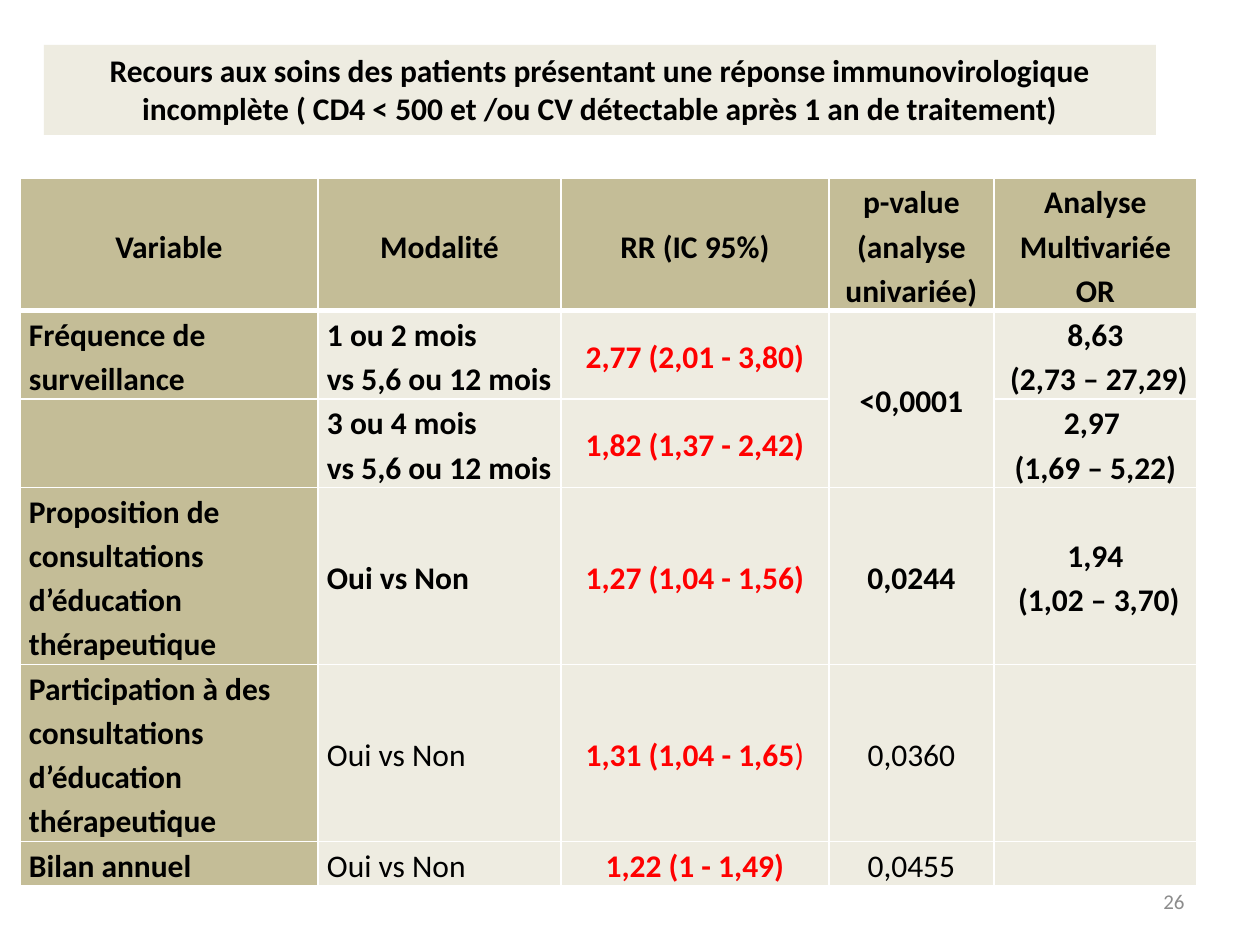
"""Build the slide on care use among patients with an incomplete response."""
import pptx
import pptx.dml.color
import pptx.enum.shapes
import pptx.enum.text
import pptx.oxml
import pptx.oxml.ns
import pptx.util

RGB = pptx.dml.color.RGBColor
ALIGN = pptx.enum.text.PP_ALIGN
MIDDLE = pptx.enum.text.MSO_ANCHOR.MIDDLE
TAN, CREAM = RGB(0xC4, 0xBD, 0x97), RGB(0xEE, 0xEC, 0xE1)
BLACK, RED, GRAY = RGB(0, 0, 0), RGB(0xFF, 0, 0), RGB(0x8C, 0x8C, 0x8C)
FONT = "Calibri"
SCALE = 914400 // 126

TITLE = ("Recours aux soins des patients présentant une réponse immunovirologique "
         "incomplète ( CD4 < 500 et /ou CV détectable après 1 an de traitement)")
PAGE = "26"
ROWS = [
    ("Variable", "Modalité", "RR (IC 95%)", "p-value (analyse univariée)",
     "Analyse Multivariée\nOR"),
    ("Fréquence de surveillance", "1 ou 2 mois\nvs 5,6 ou 12 mois",
     "2,77 (2,01 - 3,80)", "<0,0001", "8,63\n (2,73 – 27,29)"),
    ("", "3 ou 4 mois\nvs 5,6 ou 12 mois", "1,82 (1,37 - 2,42)", "",
     "2,97 \n(1,69 – 5,22)"),
    ("Proposition de consultations d’éducation thérapeutique", "Oui vs Non",
     "1,27 (1,04 - 1,56)", "0,0244", "1,94\n (1,02 – 3,70)"),
    ("Participation à des consultations d’éducation thérapeutique", "Oui vs Non",
     "1,31 (1,04 - 1,65|)", "0,0360", ""),
    ("Bilan annuel", "Oui vs Non", "1,22 (1 - 1,49)", "0,0455", ""),
]
WIDTHS = [298, 243, 268, 165, 203]
HEIGHTS = [132, 88, 88, 177, 177, 44]
LIGHT = {(r, c) for r in (4, 5) for c in (1, 3)}


def px(n):
    return pptx.util.Emu(n * SCALE)


def style(font, size, color, bold):
    font.name, font.size, font.bold = FONT, pptx.util.Pt(size), bold
    font.color.rgb = color


def edge(cell, row):
    props = cell._tc.get_or_add_tcPr()
    for i, side in enumerate("LRTB"):
        thick = (row == 0 and side == "B") or (row == 1 and side == "T")
        props.insert(i, pptx.oxml.parse_xml(
            f'<a:ln{side} {pptx.oxml.ns.nsdecls("a")} w="{38100 if thick else 12700}">'
            '<a:solidFill><a:srgbClr val="FFFFFF"/></a:solidFill>'
            f'</a:ln{side}>'))


def fill_cell(cell, text, row, col):
    cell.fill.solid()
    cell.fill.fore_color.rgb = TAN if row == 0 or col == 0 else CREAM
    cell.margin_left = cell.margin_right = px(9)
    cell.margin_top = cell.margin_bottom = 0
    cell.vertical_anchor = MIDDLE
    edge(cell, row)
    color = RED if row and col == 2 else BLACK
    for i, line in enumerate(text.split("\n")):
        frame = cell.text_frame
        para = frame.add_paragraph() if i else frame.paragraphs[0]
        para.alignment = ALIGN.CENTER if row == 0 or col > 1 else ALIGN.LEFT
        para.line_spacing = 1.15
        for j, part in enumerate(line.split("|")):
            if part:
                run = para.add_run()
                run.text = part
                style(run.font, 18, color, (row, col) not in LIGHT and j == 0)


def add_grid(slide):
    frame = slide.shapes.add_table(len(ROWS), len(WIDTHS), px(20), px(178),
                                   px(sum(WIDTHS)), px(sum(HEIGHTS)))
    table = frame.table
    for col, width in zip(table.columns, WIDTHS):
        col.width = px(width)
    for row, height in zip(table.rows, HEIGHTS):
        row.height = px(height)
    for r, row in enumerate(ROWS):
        for c, text in enumerate(row):
            fill_cell(table.cell(r, c), text, r, c)
    table.cell(1, 3).merge(table.cell(2, 3))


def write(shape, text, size, color, bold, align):
    frame = shape.text_frame
    frame.word_wrap = True
    frame.text = text
    para = frame.paragraphs[0]
    para.alignment = align
    style(para.runs[0].font, size, color, bold)


def main():
    deck = pptx.Presentation()
    deck.slide_width, deck.slide_height = px(1260), px(945)
    slide = deck.slides.add_slide(deck.slide_layouts[6])
    add_grid(slide)
    page = slide.shapes.add_textbox(px(903), px(876), px(294), px(50))
    page.text_frame.vertical_anchor = MIDDLE
    write(page, PAGE, 12, GRAY, False, ALIGN.RIGHT)
    title = slide.shapes.add_shape(pptx.enum.shapes.MSO_SHAPE.RECTANGLE,
                                   px(44), px(45), px(1112), px(90))
    title.shadow.inherit = False
    title.fill.solid()
    title.fill.fore_color.rgb = CREAM
    title.line.fill.background()
    title.text_frame.vertical_anchor = pptx.enum.text.MSO_ANCHOR.TOP
    write(title, TITLE, 18, BLACK, True, ALIGN.CENTER)
    deck.save("out.pptx")


if __name__ == "__main__":
    main()
